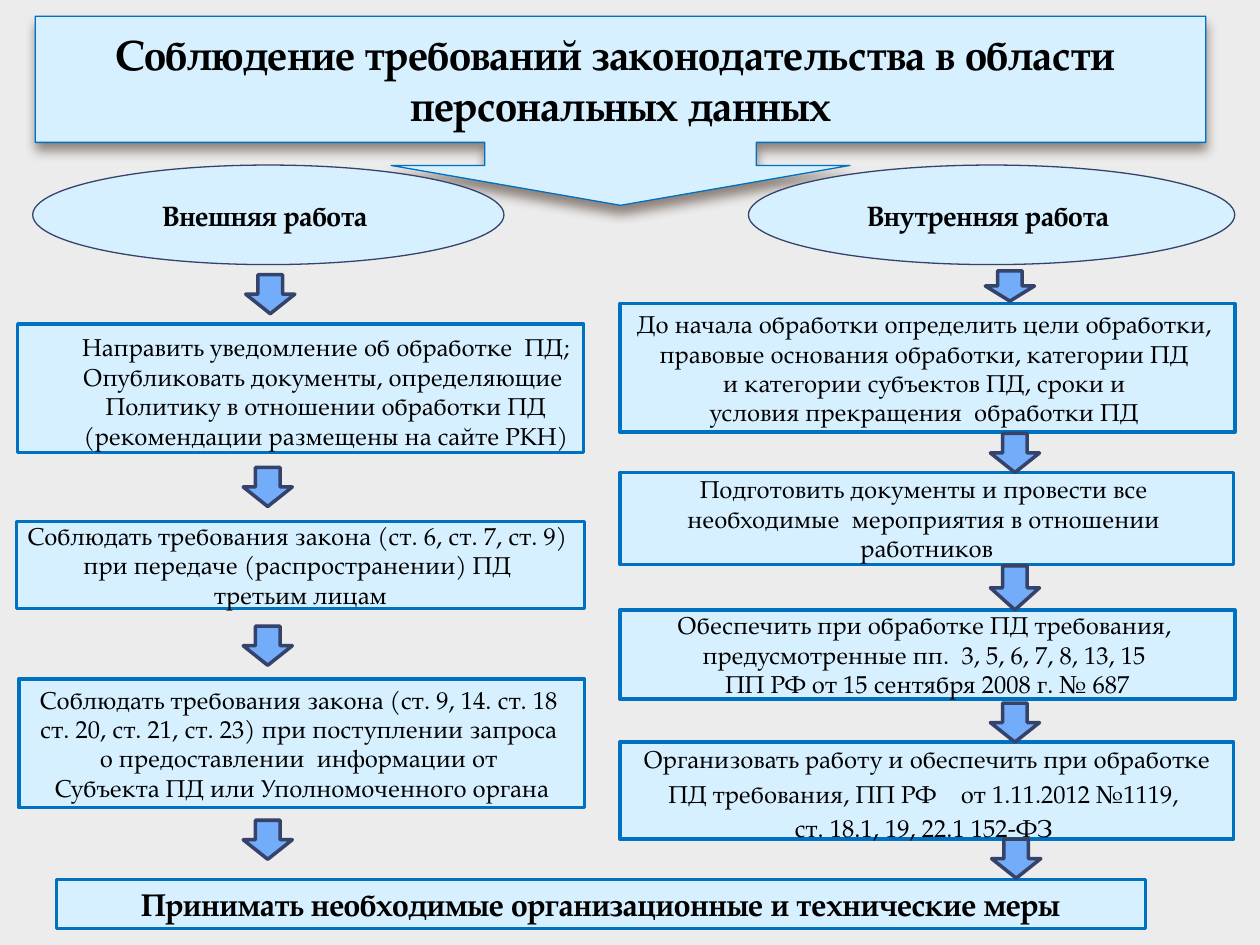
from dataclasses import dataclass

from lxml import etree
from pptx import Presentation, util as u
from pptx.dml.color import RGBColor
from pptx.enum import shapes, text
from pptx.oxml import ns

COLUMNS, ROWS = 100, 75  # square cells over the whole slide


@dataclass(frozen=True)
class Theme:
    font: str = "TeX Gyre Pagella"
    backdrop: str = "ECECEC"
    panel: str = "D6F0FF"
    border: str = "0070C0"
    arrow: str = "73ACF8"
    outline: str = "35436A"
    ink: str = "000000"
    shade: str = "4E3B30"
    title: float = 24
    total: float = 18
    heading: float = 16
    body: float = 14
    thin: float = 0.75
    thick: float = 2


class Flowchart:
    def __init__(self, deck, theme):
        self.deck, self.theme = deck, theme
        self.page = deck.slides.add_slide(deck.slide_layouts[6])
        fill = self.page.background.fill
        fill.solid()
        fill.fore_color.rgb = RGBColor.from_string(theme.backdrop)

    def shape(self, kind, area, fill, line, weight):
        left, top, width, height = area
        cell_w = self.deck.slide_width / COLUMNS
        cell_h = self.deck.slide_height / ROWS
        box = self.page.shapes.add_shape(
            kind, round(left * cell_w), round(top * cell_h),
            round(width * cell_w), round(height * cell_h))
        box.shadow.inherit = False
        box.fill.solid()
        box.fill.fore_color.rgb = RGBColor.from_string(fill)
        box.line.color.rgb = RGBColor.from_string(line)
        box.line.width = u.Pt(weight)
        return box

    def label(self, box, words, size, bold=False, gap=0):
        frame = box.text_frame
        frame.word_wrap = False
        frame.vertical_anchor = text.MSO_ANCHOR.MIDDLE
        frame.text = words
        style = {"name": self.theme.font, "size": u.Pt(size), "bold": bold}
        for index, para in enumerate(frame.paragraphs):
            para.alignment = text.PP_ALIGN.CENTER
            para.space_before = u.Pt(gap if index else 0)
            for span in para.runs:
                for name, value in style.items():
                    setattr(span.font, name, value)
                span.font.color.rgb = RGBColor.from_string(self.theme.ink)

    def callout(self, area, words, proportions):
        t = self.theme
        box = self.shape(shapes.MSO_SHAPE.DOWN_ARROW_CALLOUT, area,
                         t.panel, t.border, t.thin)
        for index, value in enumerate(proportions):
            box.adjustments[index] = value
        self.label(box, words, t.title, bold=True)
        self.cast_shadow(box)

    def cast_shadow(self, box):
        effects = box._element.spPr.find(ns.qn("a:effectLst"))
        shadow = etree.SubElement(
            effects, ns.qn("a:outerShdw"), blurRad=str(u.Pt(6)),
            dist=str(u.Pt(4)), dir="5400000", rotWithShape="0")
        color = etree.SubElement(shadow, ns.qn("a:srgbClr"), val=self.theme.shade)
        etree.SubElement(color, ns.qn("a:alpha"), val="60000")

    def heading(self, area, words):
        t = self.theme
        box = self.shape(shapes.MSO_SHAPE.OVAL, area, t.panel, t.outline, t.thin)
        self.label(box, words, t.heading, bold=True)

    def card(self, area, words, size=None, bold=False, gap=0, insets=None):
        t = self.theme
        box = self.shape(shapes.MSO_SHAPE.RECTANGLE, area,
                         t.panel, t.border, t.thick)
        for name, inches in (insets or {}).items():
            setattr(box.text_frame, name, u.Inches(inches))
        self.label(box, words, size or t.body, bold, gap)

    def arrow(self, left, top, height=3.1):
        t = self.theme
        self.shape(shapes.MSO_SHAPE.DOWN_ARROW, (left, top, 3.9, height),
                   t.arrow, t.outline, t.thick)


# Area, wording and special format of every step
STEPS = [
    ((1.4, 25.7, 44.9, 10.2),
     "Направить уведомление об обработке  ПД;\n"
     "Опубликовать документы, определяющие \n"
     "Политику в отношении обработки ПД\n"
     "(рекомендации размещены на сайте РКН)",
     {"insets": {"margin_left": 0.5, "margin_top": 0.1}}),
    ((1.3, 41.4, 45.1, 6.9),
     "Соблюдать требования закона (ст. 6, ст. 7, ст. 9) \n"
     "при передаче (распространении) ПД \n"
     "третьим лицам", {}),
    ((1.5, 53.9, 44.9, 10.2),
     "Соблюдать требования закона (ст. 9, 14. ст. 18 \n"
     "ст. 20, ст. 21, ст. 23) при поступлении запроса \n"
     "о предоставлении  информации от \n"
     "Субъекта ПД или Уполномоченного органа", {}),
    ((49.2, 24.1, 48.8, 10.2),
     "До начала обработки определить цели обработки, \n"
     "правовые основания обработки, категории ПД \n"
     "и категории субъектов ПД, сроки и \n"
     "условия прекращения  обработки ПД ", {}),
    ((49.2, 37.5, 48.7, 7.3),
     "Подготовить документы и провести все \n"
     "необходимые  мероприятия в отношении \n"
     "работников", {}),
    ((49.2, 48.4, 48.8, 7.1),
     "Обеспечить при обработке ПД требования, \n"
     "предусмотренные пп.  3, 5, 6, 7, 8, 13, 15 \n"
     "ПП РФ от 15 сентября 2008 г. № 687", {}),
    ((49.2, 58.9, 48.7, 7.7),
     "Организовать работу и обеспечить при обработке\n"
     "ПД требования, ПП РФ    от 1.11.2012 №1119, \n"
     "ст. 18.1, 19, 22.1 152-ФЗ ",
     {"gap": 3, "insets": {"margin_top": 0.09}}),
]

# Left edge, top and, where it differs, height
ARROWS = [
    (19.5, 21.8), (19.3, 37.1), (19.3, 49.7), (19.3, 65.1),
    (78.2, 21.5, 2.4), (78.6, 34.4), (78.6, 44.9, 3.5), (78.6, 55.8),
    (78.7, 66.6),
]


def main():
    deck = Presentation()
    deck.slide_width, deck.slide_height = u.Inches(10), u.Inches(7.5)
    chart = Flowchart(deck, Theme())

    # Title and the two branches
    chart.callout((2.8, 1.3, 92.9, 15),
                  "Соблюдение требований законодательства в области \v"
                  "персональных данных", (1.437, 1.214, 0.211, 0.667))
    chart.heading((2.6, 13.1, 37.4, 7.9), "Внешняя работа ")
    chart.heading((59.4, 13.1, 38.6, 7.9), "Внутренняя работа ")

    # Steps and the shared outcome
    for area, words, extras in STEPS:
        chart.card(area, words, **extras)
    chart.card((4.5, 69.8, 86.4, 3.9),
               "Принимать необходимые организационные и технические меры",
               size=chart.theme.total, bold=True)

    # Flow arrows
    for place in ARROWS:
        chart.arrow(*place)

    deck.save("out.pptx")


if __name__ == "__main__":
    main()
